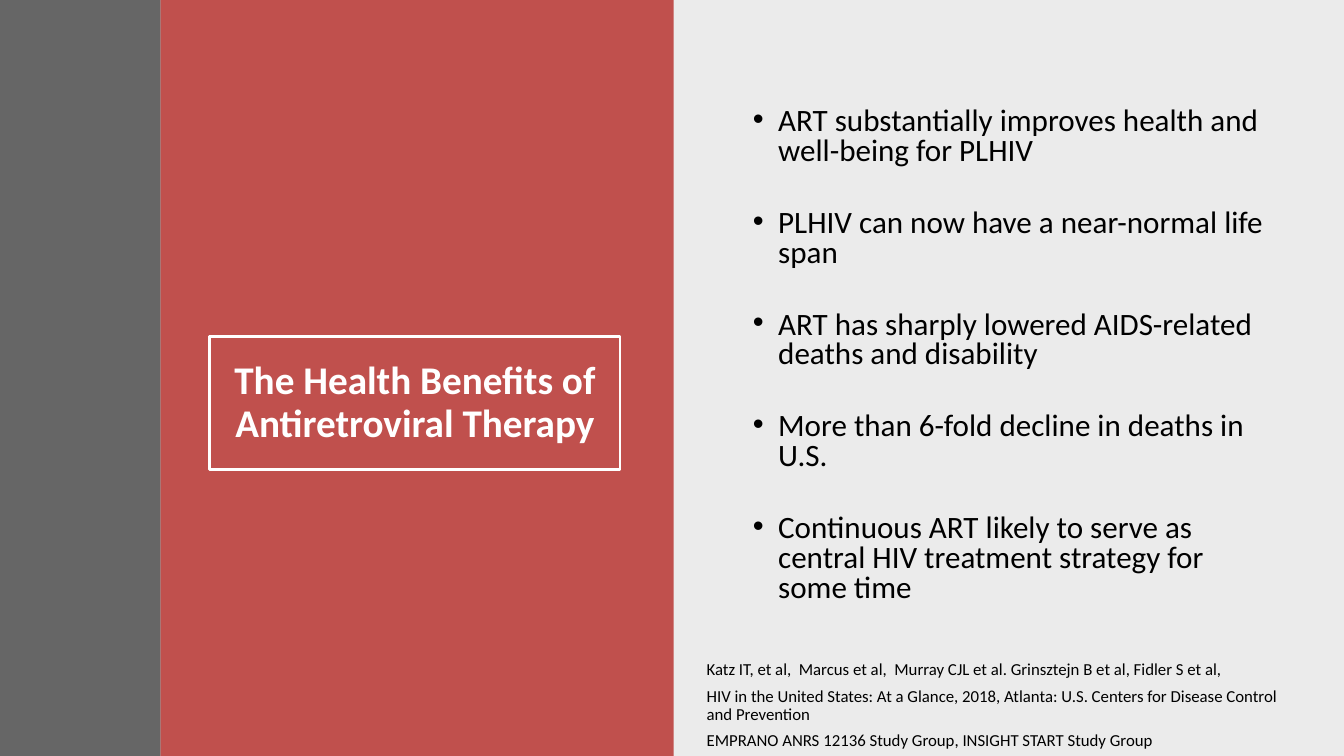
from lxml import etree
from pptx import Presentation
from pptx.dml.color import RGBColor
from pptx.enum.shapes import MSO_SHAPE
from pptx.enum.text import MSO_ANCHOR, PP_ALIGN
from pptx.oxml.ns import qn
from pptx.util import Inches, Pt

COLORS = {"black": "000000", "red": "C0504D", "gray": "404040", "white": "FFFFFF"}

prs = Presentation()
prs.slide_width, prs.slide_height = Inches(13.33), Inches(7.5)
s = prs.slides.add_slide(prs.slide_layouts[6])


def add_panel(left, width, color, opacity):
    sp = s.shapes.add_shape(MSO_SHAPE.RECTANGLE, Inches(left), 0, Inches(width), prs.slide_height)
    sp.shadow.inherit = False
    sp.line.fill.background()
    sp.fill.solid()
    sp.fill.fore_color.rgb = RGBColor.from_string(COLORS[color])
    if opacity < 100:
        clr = sp.fill._xPr.find(".//" + qn("a:srgbClr"))
        etree.SubElement(clr, qn("a:alpha"), val=str(opacity * 1000))


def add_text(box, lines, font, para, anchor=MSO_ANCHOR.TOP):
    sp = s.shapes.add_textbox(*[Inches(v) for v in box])
    tf = sp.text_frame
    tf.word_wrap = True
    tf.vertical_anchor = anchor
    for i, line in enumerate(lines):
        p = tf.paragraphs[0] if i == 0 else tf.add_paragraph()
        for name, value in para.items():
            setattr(p, name, value)
        r = p.add_run()
        r.text = line
        r.font.name = "Calibri"
        r.font.color.rgb = RGBColor.from_string(COLORS[font["color"]])
        r.font.size = Pt(font["size"])
        r.font.bold = font.get("bold", False)
    return sp


add_panel(6.67, 6.67, "black", 8)
add_panel(1.59, 5.09, "red", 100)

title = add_text(
    (2.08, 3.34, 4.07, 1.32),
    ["The Health Benefits of Antiretroviral Therapy"],
    {"size": 28, "color": "white", "bold": True},
    {"alignment": PP_ALIGN.CENTER, "line_spacing": 0.9},
    MSO_ANCHOR.MIDDLE,
)
title.line.color.rgb = RGBColor.from_string(COLORS["white"])
title.line.width = Pt(2)

add_panel(0, 1.59, "gray", 80)

benefits = add_text(
    (7.25, 1.02, 5.53, 5.49),
    [
        "ART substantially improves health and well-being for PLHIV",
        "PLHIV can now have a near-normal life span",
        "ART has sharply lowered AIDS-related deaths and disability",
        "More than 6-fold decline in deaths in U.S.",
        "Continuous ART likely to serve as central HIV treatment strategy for some time",
    ],
    {"size": 22.2, "color": "black"},
    {"line_spacing": 0.8, "space_after": Pt(30)},
)
for p in benefits.text_frame.paragraphs:
    pPr = p._p.get_or_add_pPr()
    pPr.set("marL", str(Inches(0.37)))
    pPr.set("indent", str(Inches(-0.25)))
    etree.SubElement(pPr, qn("a:buFont"), typeface="Arial")
    etree.SubElement(pPr, qn("a:buChar"), char="•")

add_text(
    (6.91, 6.51, 6.09, 0.99),
    [
        "Katz IT, et al,  Marcus et al,  Murray CJL et al. Grinsztejn B et al, Fidler S et al,",
        "HIV in the United States: At a Glance, 2018, Atlanta: U.S. Centers for Disease Control and Prevention",
        "EMPRANO ANRS 12136 Study Group, INSIGHT START Study Group",
    ],
    {"size": 12, "color": "black"},
    {"line_spacing": 0.9, "space_after": Pt(6)},
)

prs.save("out.pptx")
